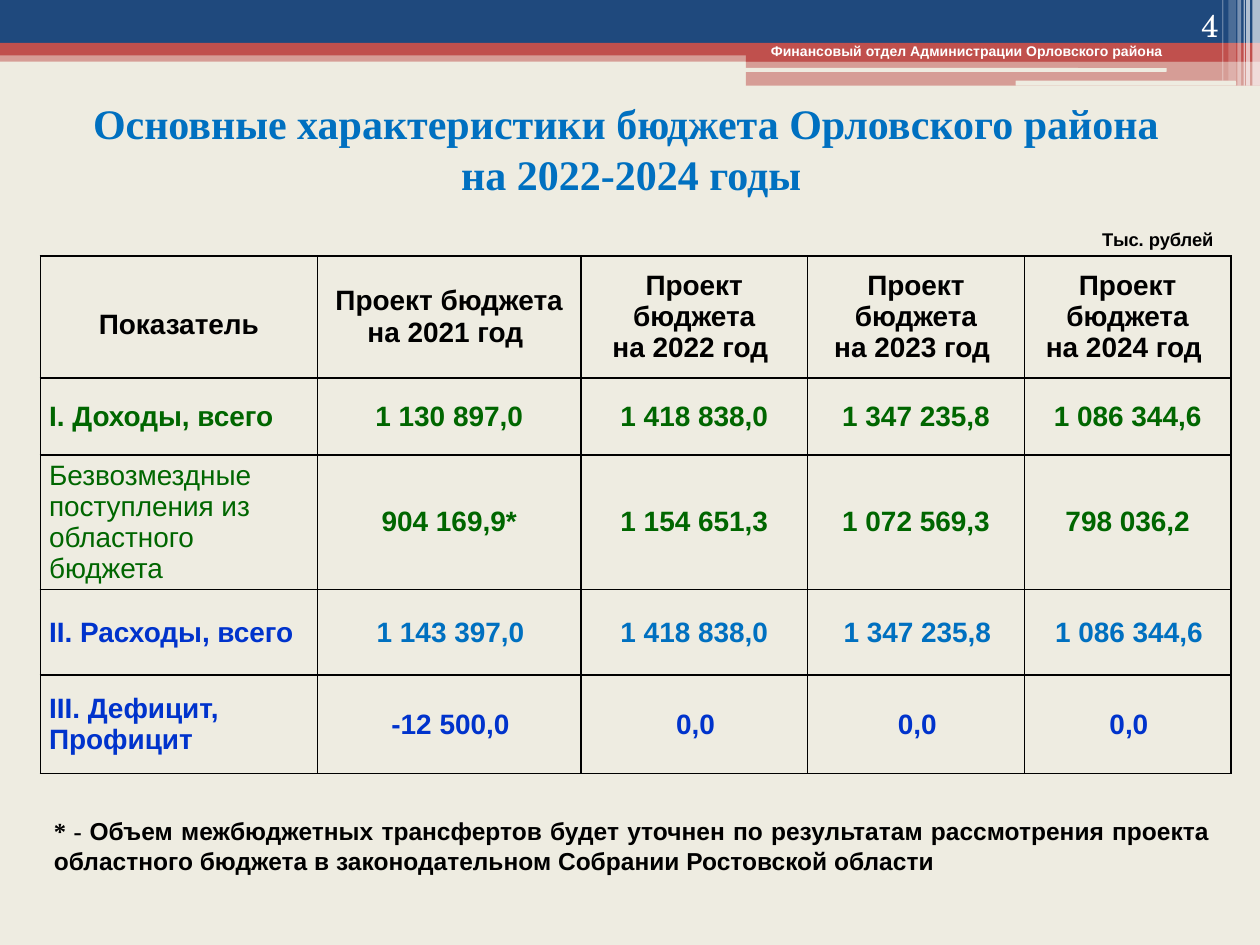
"""Build the budget overview slide of the Orlovsky district."""
from lxml.etree import SubElement
from pptx import Presentation
from pptx.dml.color import RGBColor
from pptx.enum.shapes import MSO_SHAPE
from pptx.enum.text import MSO_ANCHOR, PP_ALIGN
from pptx.oxml.ns import qn
from pptx.util import Inches, Pt

deck = Presentation()
deck.slide_width, deck.slide_height = Inches(10), Inches(7.5)
column, row = deck.slide_width / 100, deck.slide_height / 75
page = deck.slides.add_slide(deck.slide_layouts[6])


def paint(fill, color, opacity=100):
    fill.solid()
    fill.fore_color.rgb = RGBColor.from_string(color)
    if opacity < 100:
        tint = fill._xPr.find(qn("a:solidFill"))[0]
        SubElement(tint, qn("a:alpha"), val=str(opacity * 1000))


def write(para, text, size, color, bold=True, font="Arial", align=PP_ALIGN.LEFT):
    para.alignment = align
    span = para.add_run()
    span.text = text
    span.font.size, span.font.bold, span.font.name = Pt(size), bold, font
    paint(span.font.fill, color)


paint(page.background.fill, "EEECE1")

bands = [
    (0, 4, 100, 0.9, "C0504D", 50),
    (0, 0, 100, 3.4, "1F497D", 100),
    (0, 3.4, 100, 1, "C0504D", 100),
    (59.2, 3.9, 40.8, 1, "C0504D", 100),
    (59.2, 4.8, 40.8, 2, "C0504D", 50),
    (59.1, 5.4, 33.5, 0.3, "EEECE1", 100),
    (80.6, 6.4, 17.5, 0.4, "EEECE1", 100),
    (99.4, 0, 0.6, 6.8, "FFFFFF", 65),
    (98.9, 0, 0.3, 6.8, "FFFFFF", 65),
    (98.7, 0, 0.1, 6.8, "FFFFFF", 60),
    (98.2, 0, 0.3, 6.8, "FFFFFF", 40),
    (97.5, 0, 0.6, 6.4, "FFFFFF", 20),
    (97, 0, 0.1, 6.4, "FFFFFF", 30),
]
for left, top, width, height, color, opacity in bands:
    outline = MSO_SHAPE.ROUNDED_RECTANGLE if color == "EEECE1" else MSO_SHAPE.RECTANGLE
    band = page.shapes.add_shape(
        outline, int(left * column), int(top * row), int(width * column), int(height * row))
    band.shadow.inherit = False
    band.line.fill.background()
    paint(band.fill, color, opacity)

labels = [
    (60.2, 2.9, 36.7, 2.4, MSO_ANCHOR.TOP, PP_ALIGN.LEFT, [
        ("Финансовый отдел Администрации Орловского района", 8, "FFFFFF", True, "Arial")]),
    (5.1, 7.4, 90, 8.7, MSO_ANCHOR.MIDDLE, PP_ALIGN.CENTER, [
        ("Основные характеристики бюджета Орловского района \vна 2022-2024 годы",
         24, "0070C0", True, "Times New Roman")]),
    (83.1, 17.6, 14.2, 2.8, MSO_ANCHOR.TOP, PP_ALIGN.RIGHT, [
        ("Тыс. рублей", 10.5, "000000", True, "Arial")]),
    (89.4, 0, 8.3, 4, MSO_ANCHOR.BOTTOM, PP_ALIGN.RIGHT, [
        ("4", 18, "FFFFFF", False, "TeX Gyre Schola")]),
    (3.3, 64.3, 93.7, 5.7, MSO_ANCHOR.TOP, PP_ALIGN.JUSTIFY, [
        ("* - ", 14, "000000", True, "Times New Roman"),
        ("Объем межбюджетных трансфертов будет уточнен по результатам рассмотрения проекта "
         "областного бюджета в законодательном Собрании Ростовской области",
         14, "000000", True, "Arial")]),
]
for left, top, width, height, anchor, align, spans in labels:
    box = page.shapes.add_textbox(
        int(left * column), int(top * row), int(width * column), int(height * row))
    box.text_frame.word_wrap = True
    box.text_frame.vertical_anchor = anchor
    para = box.text_frame.paragraphs[0]
    for text, size, color, bold, font in spans:
        for number, line in enumerate(text.split("\v")):
            if number:
                para.add_line_break()
            write(para, line, size, color, bold, font, align)

years = [f"Проект бюджета\nна {year} год " for year in range(2021, 2025)]
budget = [
    ["Показатель", *years],
    ["I. Доходы, всего", "1 130 897,0", "1 418 838,0", "1 347 235,8", "1 086 344,6"],
    ["Безвозмездные поступления из областного бюджета",
     "904 169,9*", "1 154 651,3", "1 072 569,3", "798 036,2"],
    ["II. Расходы, всего", "1 143 397,0", "1 418 838,0", "1 347 235,8", "1 086 344,6"],
    ["III. Дефицит, Профицит", "-12 500,0", "0,0", "0,0", "0,0"],
]
name_colors = ["000000", "006600", "006600", "0033CC", "0033CC"]
value_colors = ["000000", "006600", "006600", "0070C0", "0033CC"]
widths = [22, 20.9, 18, 17.2, 16.4]
heights = [9.7, 6.1, 10.7, 6.8, 7.8]

table = page.shapes.add_table(
    len(heights), len(widths), int(3.2 * column), int(20.3 * row),
    int(sum(widths) * column), int(sum(heights) * row)).table
table.first_row = table.horz_banding = False
for index, width in enumerate(widths):
    table.columns[index].width = int(width * column)

for r, values in enumerate(budget):
    table.rows[r].height = int(heights[r] * row)
    for c, value in enumerate(values):
        cell = table.cell(r, c)
        cell.vertical_anchor = MSO_ANCHOR.MIDDLE
        cell.margin_left = cell.margin_right = int(0.7 * column)
        cell.margin_top = cell.margin_bottom = 0
        for side in ("lnL", "lnR", "lnT", "lnB"):
            border = SubElement(cell._tc.get_or_add_tcPr(), qn(f"a:{side}"), w=str(Pt(1)))
            ink = SubElement(border, qn("a:solidFill"))
            SubElement(ink, qn("a:srgbClr"), val="000000")
        cell.fill.background()

        color = value_colors[r] if c else name_colors[r]
        align = PP_ALIGN.CENTER if c or r == 0 else PP_ALIGN.LEFT
        for number, line in enumerate(value.split("\n")):
            para = cell.text_frame.add_paragraph() if number else cell.text_frame.paragraphs[0]
            write(para, line, 16, color, bool(c) or r != 2, "Arial", align)
            if bool(r) == bool(c):
                indent = 0.2 if r > 2 and (r, c) != (3, 2) else -0.7
                para._p.get_or_add_pPr().set("marL", "0")
                para._p.get_or_add_pPr().set("indent", str(int(indent * column)))
table.cell(0, 0).text_frame.paragraphs[0].line_spacing = 1.5

deck.save("out.pptx")
